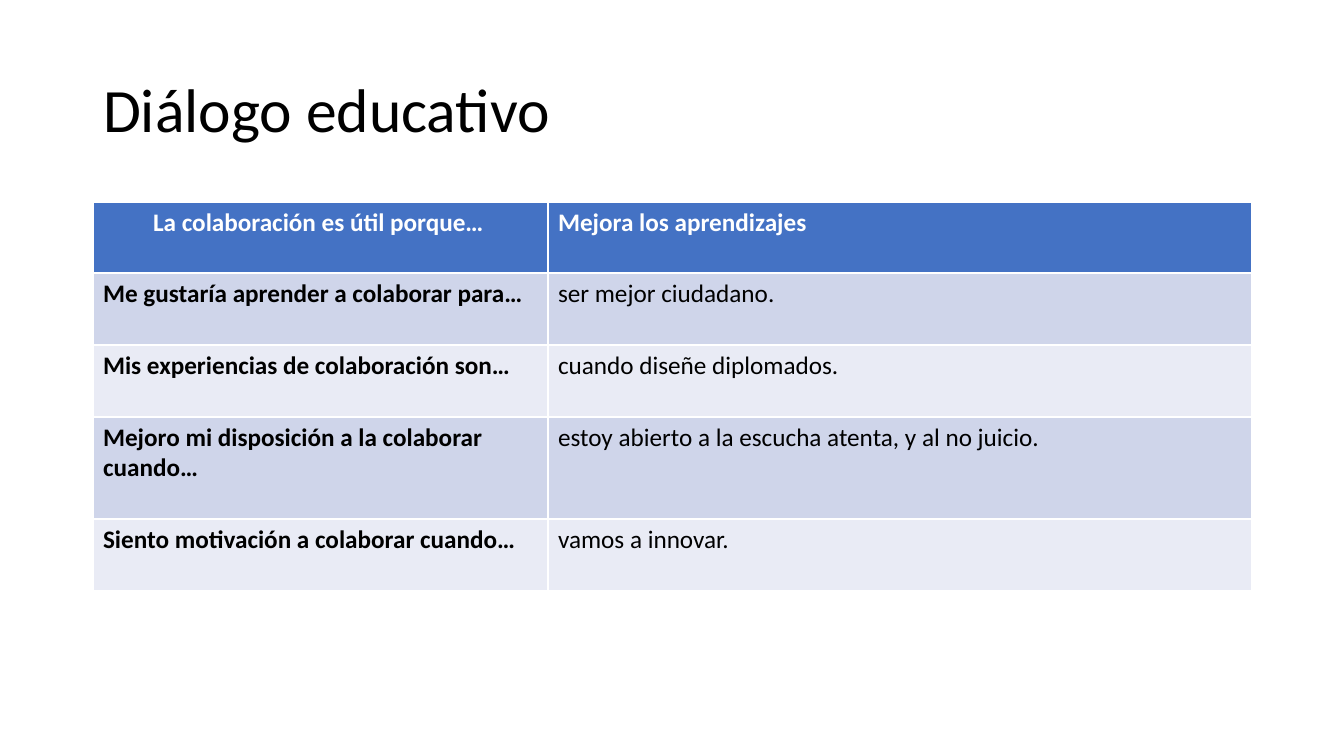
from pptx import Presentation
from pptx.dml.color import RGBColor
from pptx.enum.text import MSO_ANCHOR, PP_ALIGN
from pptx.util import Pt

TITLE = "Diálogo educativo"
ROWS = [
    ("La colaboración es útil porque…", "Mejora los aprendizajes"),
    ("Me gustaría aprender a colaborar para…", "ser mejor ciudadano."),
    ("Mis experiencias de colaboración son…", "cuando diseñe diplomados."),
    ("Mejoro mi disposición a la colaborar cuando…",
     "estoy abierto a la escucha atenta, y al no juicio."),
    ("Siento motivación a colaborar cuando…", "vamos a innovar."),
]
COLUMN_WIDTHS = (455, 704)
ROW_HEIGHTS = (71, 72, 72, 102, 72)
LEFT, TITLE_TOP, TITLE_HEIGHT, TABLE_TOP = 93, 40, 146, 202
HEADER_INDENT = 50

FONT = "Calibri"
BLACK = RGBColor(0x00, 0x00, 0x00)
WHITE = RGBColor(0xFF, 0xFF, 0xFF)
HEADER_BLUE = RGBColor(0x44, 0x72, 0xC4)
BANDS = (RGBColor(0xE9, 0xEB, 0xF5), RGBColor(0xCF, 0xD5, 0xEA))


def px(length):
    return round(length * 914400 / 100.8)


def set_font(paragraph, size, color, bold):
    font = paragraph.font
    font.name, font.size, font.bold = FONT, Pt(size), bold
    font.color.rgb = color


def add_title(slide, width):
    title = slide.shapes.title
    title.left, title.top = px(LEFT), px(TITLE_TOP)
    title.width, title.height = px(width), px(TITLE_HEIGHT)
    title.text_frame.text = TITLE
    title.text_frame.vertical_anchor = MSO_ANCHOR.MIDDLE
    paragraph = title.text_frame.paragraphs[0]
    paragraph.alignment = PP_ALIGN.LEFT
    paragraph.line_spacing = 0.9
    set_font(paragraph, 44, BLACK, False)


def add_dialogue_table(slide, width):
    table = slide.shapes.add_table(
        len(ROWS), len(COLUMN_WIDTHS), px(LEFT), px(TABLE_TOP),
        px(width), px(sum(ROW_HEIGHTS))).table
    for column, column_width in zip(table.columns, COLUMN_WIDTHS):
        column.width = px(column_width)
    for i, (texts, height) in enumerate(zip(ROWS, ROW_HEIGHTS)):
        table.rows[i].height = px(height)
        header = i == 0
        for j, text in enumerate(texts):
            cell = table.cell(i, j)
            cell.text = text
            cell.fill.solid()
            cell.fill.fore_color.rgb = HEADER_BLUE if header else BANDS[i % 2]
            set_font(cell.text_frame.paragraphs[0], 18,
                     WHITE if header else BLACK, header or j == 0)
    opening = table.cell(0, 0).text_frame.paragraphs[0]
    opening.level = 1
    properties = opening._p.get_or_add_pPr()
    properties.set("marL", str(px(HEADER_INDENT)))
    properties.set("indent", "0")


def main():
    presentation = Presentation()
    presentation.slide_width, presentation.slide_height = px(1344), px(756)
    slide = presentation.slides.add_slide(presentation.slide_layouts[5])
    width = sum(COLUMN_WIDTHS)
    add_title(slide, width)
    add_dialogue_table(slide, width)
    presentation.save("out.pptx")


if __name__ == "__main__":
    main()
